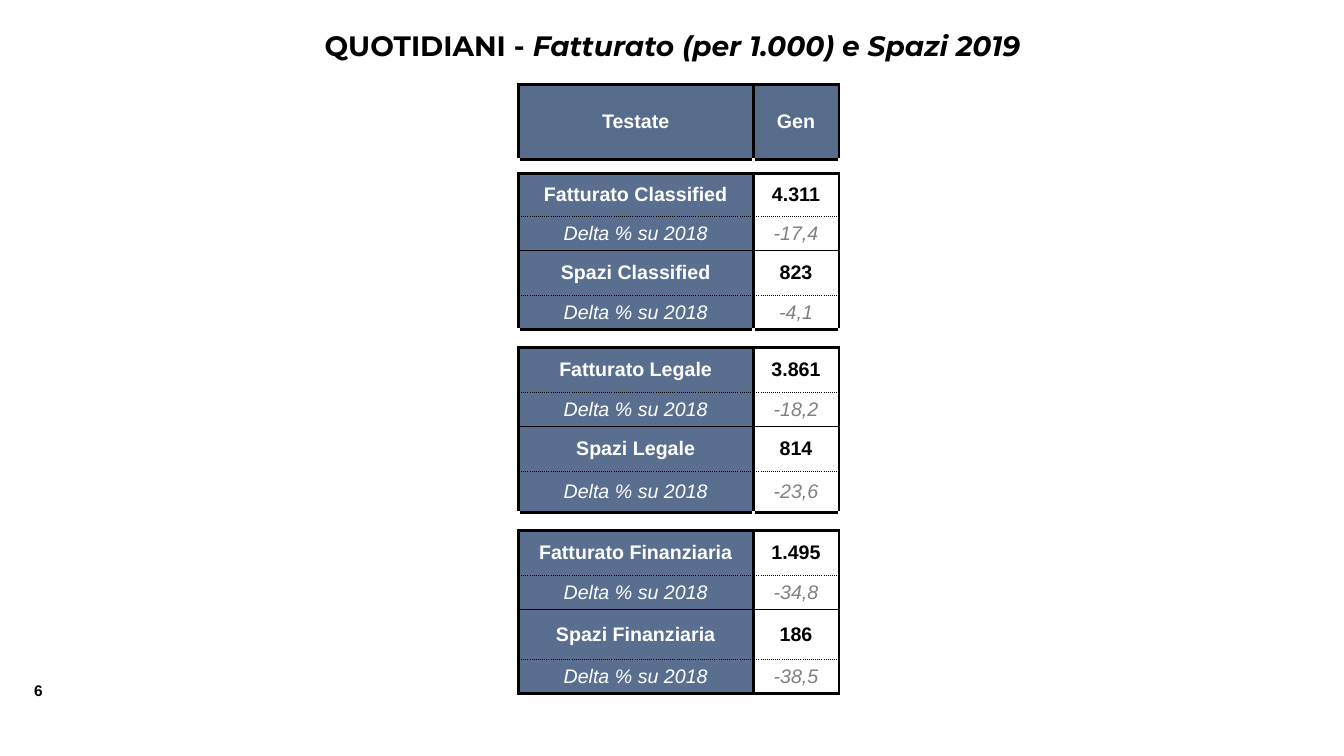
"""Build the slide on newspaper revenue and advertising space for 2019."""
from dataclasses import dataclass
from typing import Any

import lxml.etree
import pptx
import pptx.dml.color
import pptx.enum.text
import pptx.oxml.ns
import pptx.util

PX = 9144
COLOURS = {
    "black": "000000",
    "white": "FFFFFF",
    "grey": "808080",
    "header": "576B8A",
    "label": "5A6F90",
}
THICK = ("black", 2.25, "solid")
THIN = ("black", 1, "solid")
DOTTED = ("black", 1, "sysDot")
BLANK = ("white", 2.25, "solid")
COLUMN_WIDTHS = (233, 85)
LABEL_MARGINS = (10, 5, 10, 5)
VALUE_MARGINS = (0, 0, 0, 0)
DELTA = "Delta % su 2018"


@dataclass(frozen=True)
class Row:
    """One table row with its height in px, texts, fills and rules."""

    height: int
    texts: tuple[str, str] = ("", "")
    fills: tuple[str, str] = ("white", "white")
    inks: tuple[str, str] = ("white", "white")
    margins: tuple[tuple[int, ...], ...] = (VALUE_MARGINS, VALUE_MARGINS)
    italic: bool = False
    side: tuple[str, float, str] = THICK
    top: tuple[str, float, str] = THICK
    bottom: tuple[str, float, str] = THICK


@dataclass(frozen=True)
class Section:
    """One advertising type: gap above, row heights and January values."""

    name: str
    gap: int
    heights: tuple[int, int, int, int]
    values: tuple[str, str, str, str]


SECTIONS = (
    Section("Classified", 14, (43, 31, 45, 31), ("4.311", "-17,4", "823", "-4,1")),
    Section("Legale", 18, (45, 31, 45, 40), ("3.861", "-18,2", "814", "-23,6")),
    Section("Finanziaria", 18, (45, 31, 50, 31), ("1.495", "-34,8", "186", "-38,5")),
)


def px(length: int) -> pptx.util.Emu:
    """Turn px into EMU."""
    return pptx.util.Emu(length * PX)


def section_rows(section: Section) -> list[Row]:
    """Return the gap and the four rows of a section."""
    labels = (f"Fatturato {section.name}", DELTA, f"Spazi {section.name}", DELTA)
    rules = (THICK, DOTTED, THIN, DOTTED, THICK)
    rows = [Row(section.gap, side=BLANK)]
    for index, label in enumerate(labels):
        delta = label == DELTA
        rows.append(Row(
            section.heights[index],
            (label, section.values[index]),
            ("label", "white"),
            ("white", "grey" if delta else "black"),
            (LABEL_MARGINS, VALUE_MARGINS),
            delta,
            top=rules[index],
            bottom=rules[index + 1],
        ))
    return rows


def add_span(para: Any, text: str, size: int, ink: str, font: str = "Arial",
             bold: bool = True, italic: bool = False) -> None:
    """Add a formatted run to a paragraph."""
    span = para.add_run()
    span.text = text
    formats = {"name": font, "size": pptx.util.Pt(size), "bold": bold, "italic": italic}
    for key, value in formats.items():
        setattr(span.font, key, value)
    span.font.color.rgb = pptx.dml.color.RGBColor.from_string(COLOURS[ink])


def set_borders(cell: Any, row: Row) -> None:
    """Draw the four rules of a table cell."""
    qn = pptx.oxml.ns.qn
    properties = cell._tc.get_or_add_tcPr()
    edges = {"a:lnL": row.side, "a:lnR": row.side, "a:lnT": row.top, "a:lnB": row.bottom}
    for tag, (colour, width, dash) in edges.items():
        line = lxml.etree.SubElement(properties, qn(tag), w=str(int(width * 12700)))
        fill = lxml.etree.SubElement(line, qn("a:solidFill"))
        lxml.etree.SubElement(fill, qn("a:srgbClr"), val=COLOURS[colour])
        lxml.etree.SubElement(line, qn("a:prstDash"), val=dash)


def fill_cell(cell: Any, row: Row, column: int) -> None:
    """Give a table cell its rules, fill and text."""
    set_borders(cell, row)
    cell.fill.solid()
    cell.fill.fore_color.rgb = pptx.dml.color.RGBColor.from_string(COLOURS[row.fills[column]])
    cell.vertical_anchor = pptx.enum.text.MSO_ANCHOR.MIDDLE
    for side, margin in zip(("left", "top", "right", "bottom"), row.margins[column]):
        setattr(cell, f"margin_{side}", px(margin))
    para = cell.text_frame.paragraphs[0]
    para.alignment = pptx.enum.text.PP_ALIGN.CENTER
    if row.texts[column]:
        add_span(para, row.texts[column], 14, row.inks[column],
                 bold=not row.italic, italic=row.italic)
    else:
        lxml.etree.SubElement(para._p, pptx.oxml.ns.qn("a:endParaRPr"), sz="600")


def place(box: Any, left: int, top: int, width: int, height: int) -> None:
    """Move and size a shape in px."""
    for key, value in {"left": left, "top": top, "width": width, "height": height}.items():
        setattr(box, key, px(value))


def add_title(page: Any) -> None:
    """Write the slide title in its placeholder."""
    box = page.shapes.title
    place(box, 167, 23, 1000, 44)
    frame = box.text_frame
    formats = {
        "auto_size": pptx.enum.text.MSO_AUTO_SIZE.NONE,
        "vertical_anchor": pptx.enum.text.MSO_ANCHOR.MIDDLE,
        "word_wrap": True,
    }
    for key, value in formats.items():
        setattr(frame, key, value)
    para = frame.paragraphs[0]
    para.alignment = pptx.enum.text.PP_ALIGN.CENTER
    add_span(para, "QUOTIDIANI - ", 20, "black", "Montserrat")
    add_span(para, "Fatturato (per 1.000) e Spazi 2019", 20, "black", "Montserrat", italic=True)


def add_page_number(page: Any) -> None:
    """Write the page number at the lower left."""
    box = page.shapes.add_textbox(px(24), px(671), px(42), px(29))
    box.text_frame.word_wrap = False
    add_span(box.text_frame.paragraphs[0], "6", 11, "black")


def add_figures(page: Any) -> None:
    """Add the table of revenue and space by section."""
    rows = [Row(74, ("Testate", "Gen"), ("header", "header"),
                margins=(LABEL_MARGINS, LABEL_MARGINS))]
    for section in SECTIONS:
        rows.extend(section_rows(section))
    table = page.shapes.add_table(
        len(rows), len(COLUMN_WIDTHS), px(514), px(84),
        px(sum(COLUMN_WIDTHS)), px(sum(row.height for row in rows))).table
    table.first_row = table.horz_banding = False
    for column, width in enumerate(COLUMN_WIDTHS):
        table.columns[column].width = px(width)
    for index, row in enumerate(rows):
        table.rows[index].height = px(row.height)
        for column in range(len(COLUMN_WIDTHS)):
            fill_cell(table.cell(index, column), row, column)


def main() -> None:
    """Build and save the deck."""
    deck = pptx.Presentation()
    deck.slide_width, deck.slide_height = px(1333), px(750)
    page = deck.slides.add_slide(deck.slide_layouts[5])
    add_title(page)
    add_page_number(page)
    add_figures(page)
    deck.save("out.pptx")


if __name__ == "__main__":
    main()
